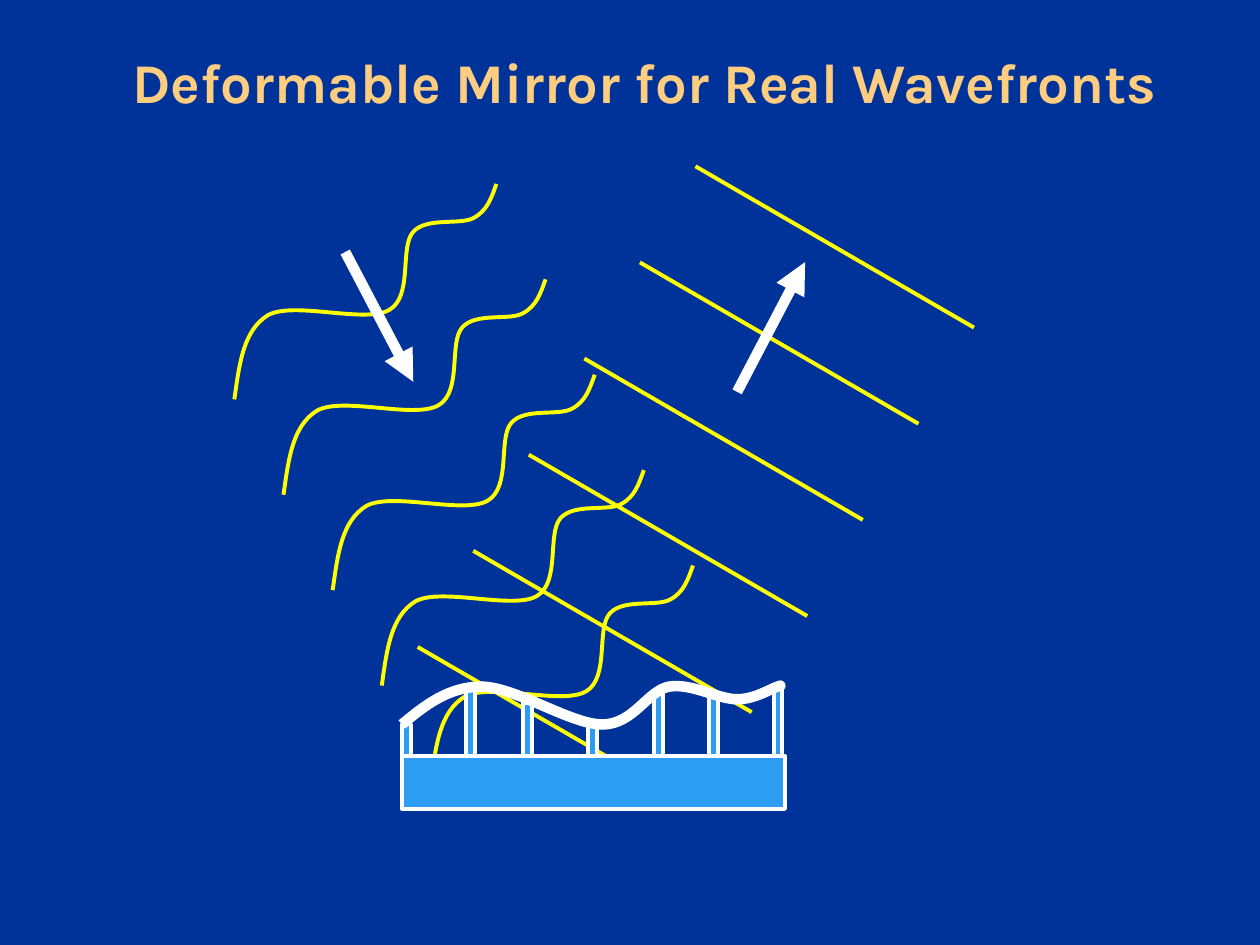
from dataclasses import dataclass

from pptx import Presentation
from pptx.dml.color import RGBColor
from pptx.enum.shapes import MSO_CONNECTOR, MSO_SHAPE
from pptx.enum.text import MSO_AUTO_SIZE
from pptx.oxml.ns import qn
from pptx.oxml.xmlchemy import OxmlElement
from pptx.util import Inches, Pt


@dataclass(frozen=True)
class Theme:
    background: str = "003399"
    light: str = "FFFF00"
    metal: str = "2D9CF3"
    outline: str = "FFFFFF"
    title: str = "FFCD7F"
    font: str = "Karla"
    title_size: float = 32
    thin: float = 2.25
    thick: float = 6


THEME = Theme()

# Bezier points: a start, then three points for each curve
WAVE = [
    (1.86, 3.17),
    (1.9, 2.89), (1.93, 2.62), (2.13, 2.5),
    (2.34, 2.39), (2.9, 2.57), (3.09, 2.46),
    (3.28, 2.35), (3.17, 1.96), (3.28, 1.84),
    (3.39, 1.72), (3.65, 1.79), (3.76, 1.73),
    (3.87, 1.67), (3.9, 1.57), (3.94, 1.46),
]
MIRROR = [
    (3.19, 5.75),
    (3.37, 5.6), (3.56, 5.45), (3.82, 5.45),
    (4.09, 5.45), (4.53, 5.75), (4.78, 5.75),
    (5.03, 5.75), (5.14, 5.48), (5.31, 5.45),
    (5.49, 5.42), (5.7, 5.55), (5.85, 5.55),
    (5.99, 5.55), (6.11, 5.47), (6.17, 5.45),
    (6.22, 5.43), (6.18, 5.45), (6.18, 5.45),
]
BASE_TOP = 6
# Left edge and top of each actuator
ACTUATORS = [(3.19, 5.75), (3.7, 5.45), (4.15, 5.58), (4.67, 5.75),
             (5.19, 5.5), (5.63, 5.5), (6.14, 5.45)]


def style_line(line, color, width):
    line.color.rgb = RGBColor.from_string(color)
    line.width = Pt(width)


def add_curve(slide, points, color, width):
    corners = [(Inches(x), Inches(y)) for x, y in points]
    builder = slide.shapes.build_freeform(*corners[0])
    builder.add_line_segments(corners[1:], close=False)
    shape = builder.convert_to_shape()
    shape.fill.background()
    style_line(shape.line, color, width)
    shape.shadow.inherit = False
    # Join every three straight segments into one cubic curve
    segments = list(shape.element.iter(qn("a:lnTo")))
    for first in range(0, len(segments), 3):
        curve = OxmlElement("a:cubicBezTo")
        segments[first].addprevious(curve)
        for segment in segments[first:first + 3]:
            curve.append(segment[0])
            segment.getparent().remove(segment)


def add_line(shapes, start, end, color, width, arrow=False):
    connector = shapes.add_connector(
        MSO_CONNECTOR.STRAIGHT, *(Inches(value) for value in (*start, *end)))
    style_line(connector.line, color, width)
    properties = connector.element.spPr
    if arrow:
        head = OxmlElement("a:tailEnd")
        head.set("type", "triangle")
        properties.find(qn("a:ln")).append(head)
    properties.append(OxmlElement("a:effectLst"))


def add_block(slide, left, top, width, height):
    shape = slide.shapes.add_shape(
        MSO_SHAPE.RECTANGLE, *(Inches(value) for value in (left, top, width, height)))
    shape.fill.solid()
    shape.fill.fore_color.rgb = RGBColor.from_string(THEME.metal)
    style_line(shape.line, THEME.outline, THEME.thin)
    shape.shadow.inherit = False


def add_text(slide, text, *, left, top, width, height, size, color, bold=False):
    box = slide.shapes.add_textbox(
        *(Inches(value) for value in (left, top, width, height)))
    frame = box.text_frame
    frame.word_wrap = False
    frame.auto_size = MSO_AUTO_SIZE.SHAPE_TO_FIT_TEXT
    paragraph = frame.paragraphs[0]
    run = paragraph.add_run()
    run.text = text
    run.font.name = THEME.font
    run.font.size = Pt(size)
    run.font.bold = bold
    run.font.color.rgb = RGBColor.from_string(color)


def main():
    presentation = Presentation()
    presentation.slide_width = Inches(10)
    presentation.slide_height = Inches(7.5)
    slide = presentation.slides.add_slide(presentation.slide_layouts[6])
    slide.background.fill.solid()
    slide.background.fill.fore_color.rgb = RGBColor.from_string(THEME.background)

    # Incoming distorted wavefronts
    for index in range(5):
        points = [(x + 0.39 * index, y + 0.757 * index) for x, y in WAVE]
        add_curve(slide, points, THEME.light, THEME.thin)

    # Reflected flat wavefronts
    group = slide.shapes.add_group_shape()
    for index in range(6):
        x, y = 5.52 - 0.441 * index, 1.32 + 0.763 * index
        add_line(group.shapes, (x, y), (x + 2.21, y + 1.28),
                 THEME.light, THEME.thin)

    # Deformable mirror: base, actuators and surface
    add_block(slide, 3.19, BASE_TOP, 3.04, 0.42)
    for left, top in ACTUATORS:
        add_block(slide, left, top, 0.07, BASE_TOP - top)
    add_curve(slide, MIRROR, THEME.outline, THEME.thick)

    # Directions of travel
    for start, end in (((2.74, 2), (3.28, 3.03)), ((5.85, 3.11), (6.39, 2.08))):
        add_line(slide.shapes, start, end, THEME.outline, THEME.thick, arrow=True)

    # Title
    add_text(slide, "Deformable Mirror for Real Wavefronts",
             left=0.95, top=0.33, width=8.35, height=0.64,
             size=THEME.title_size, color=THEME.title, bold=True)

    presentation.save("out.pptx")


if __name__ == "__main__":
    main()
